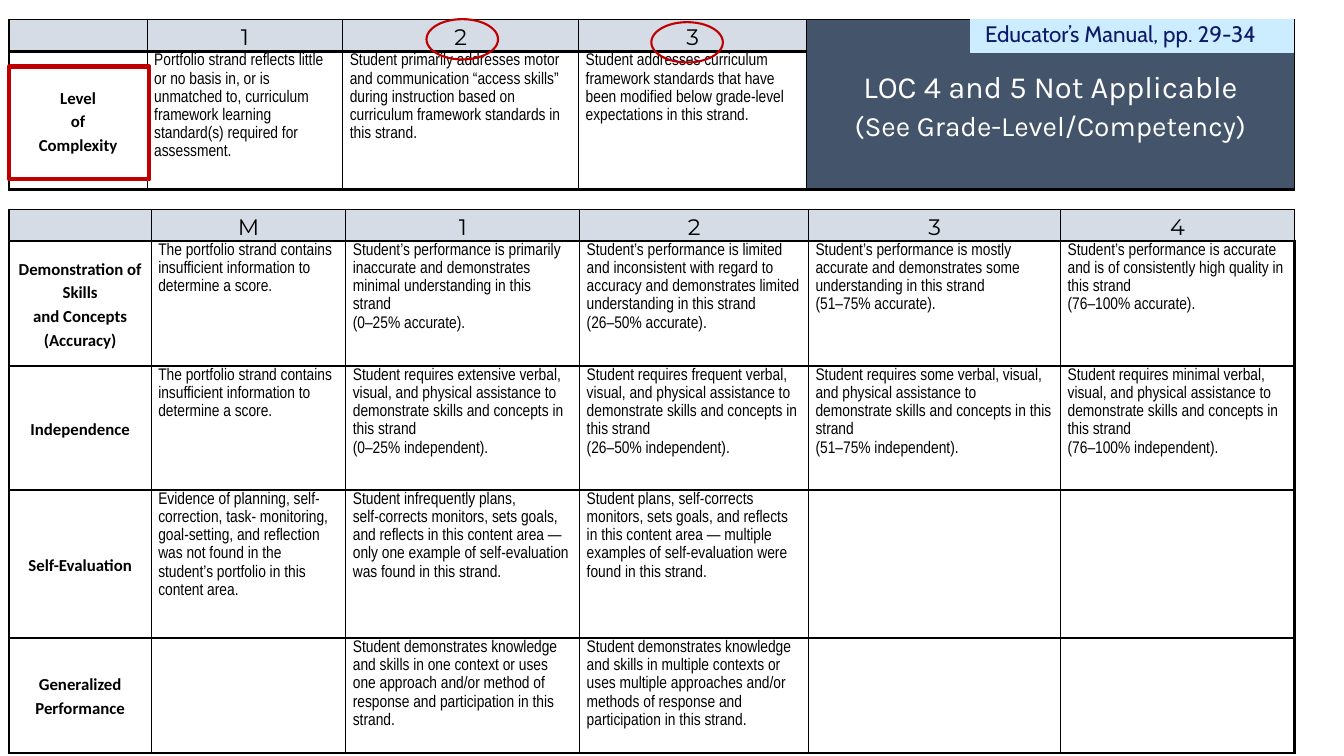
from dataclasses import dataclass

from lxml import etree
from pptx import Presentation
from pptx.dml.color import RGBColor
from pptx.enum.shapes import MSO_SHAPE
from pptx.enum.text import MSO_ANCHOR, PP_ALIGN
from pptx.oxml.ns import qn
from pptx.util import Inches, Pt

LEFT, CENTER = PP_ALIGN.LEFT, PP_ALIGN.CENTER
TOP, MIDDLE = MSO_ANCHOR.TOP, MSO_ANCHOR.MIDDLE
RECTANGLE, OVAL = MSO_SHAPE.RECTANGLE, MSO_SHAPE.OVAL


@dataclass(frozen=True)
class Theme:
    black: str = "000000"
    white: str = "FFFFFF"
    header: str = "D6DCE5"
    slate: str = "44546A"
    sky: str = "CCECFF"
    navy: str = "0D1969"
    red: str = "C00000"
    body_size: int = 12
    header_size: int = 16
    notice_sizes: tuple = (22, 20)
    thin: float = 1
    thick: float = 2.25


THEME = Theme()


@dataclass(frozen=True)
class Box:
    left: float
    top: float
    width: float
    height: float

    def inset(self, left, top, width, height):
        return Box(self.left + left, self.top + top, width, height)

    def emu(self):
        return [Inches(n) for n in (self.left, self.top, self.width, self.height)]


PAGE = Box(0, 0, 13.33, 7.5)
COMPLEXITY = PAGE.inset(0.09, 0.19, 12.74, 1.69)
COMPLEXITY_COLUMNS = [1.37, 1.94, 2.34, 2.26, 4.84]
COMPLEXITY_ROWS = [0.32, 1.37]
SCORES = PAGE.inset(0.09, 2.08, 12.75, 5.39)
SCORE_COLUMNS = [1.41, 1.93, 2.32, 2.27, 2.5, 2.32]
SCORE_ROWS = [0.31, 1.24, 1.23, 1.47, 1.14]

NOTICE = "LOC 4 and 5 Not Applicable\n(See Grade-Level/Competency)"
COMPLEXITY_TEXT = [
    ["", "1", "2", "3", ""],
    ["Level\nof\nComplexity",
     "Portfolio strand reflects little or no basis in, or is unmatched to, curriculum "
     "framework learning standard(s) required for assessment.",
     "Student primarily addresses motor and communication “access skills” during "
     "instruction based on curriculum framework standards in this strand.",
     "Student addresses curriculum framework standards that have been modified below "
     "grade-level expectations in this strand.",
     ""],
]

INSUFFICIENT = "The portfolio strand contains insufficient information to determine a score."
RANGES = ["0–25%", "26–50%", "51–75%", "76–100%"]
ACCURACY = [
    "primarily inaccurate and demonstrates minimal understanding",
    "limited and inconsistent with regard to accuracy and demonstrates limited understanding",
    "mostly accurate and demonstrates some understanding",
    "accurate and is of consistently high quality",
]
ASSISTANCE = ["extensive", "frequent", "some", "minimal"]
SCORE_TEXT = [
    ["", "M", "1", "2", "3", "4"],
    ["Demonstration of Skills\nand Concepts\n(Accuracy)", INSUFFICIENT]
    + [f"Student’s performance is {level} in this strand\n({share} accurate)."
       for level, share in zip(ACCURACY, RANGES)],
    ["Independence", INSUFFICIENT]
    + [f"Student requires {level} verbal, visual, and physical assistance to demonstrate "
       f"skills and concepts in this strand\n({share} independent)."
       for level, share in zip(ASSISTANCE, RANGES)],
    ["Self-Evaluation",
     "Evidence of planning, self-correction, task- monitoring, goal-setting, and reflection "
     "was not found in the student’s portfolio in this content area.",
     "Student infrequently plans,\nself-corrects monitors, sets goals, and reflects in this "
     "content area — only one example of self-evaluation was found in this strand.",
     "Student plans, self-corrects monitors, sets goals, and reflects in this content area — "
     "multiple examples of self-evaluation were found in this strand.",
     "", ""],
    ["Generalized Performance", "",
     "Student demonstrates knowledge and skills in one context or uses one approach and/or "
     "method of response and participation in this strand.",
     "Student demonstrates knowledge and skills in multiple contexts or uses multiple "
     "approaches and/or methods of response and participation in this strand.",
     "", ""],
]


def write(frame, text, *, font, size=THEME.body_size, color=THEME.black, bold=False,
          align=LEFT, spacing=1.15):
    """Fill a text frame, one paragraph for each line of text."""
    for number, line in enumerate(text.split("\n")):
        para = frame.add_paragraph() if number else frame.paragraphs[0]
        para.alignment, para.line_spacing = align, spacing
        span = para.add_run()
        span.text = line
        span.font.name, span.font.size, span.font.bold = font, Pt(size), bold
        span.font.color.rgb = RGBColor.from_string(color)


def set_border(cell, side, width):
    line = etree.SubElement(cell._tc.get_or_add_tcPr(), qn(f"a:ln{side}"), w=str(Pt(width)))
    fill = etree.SubElement(line, qn("a:solidFill"))
    etree.SubElement(fill, qn("a:srgbClr"), val=THEME.black)


def paint(cell, color):
    cell.fill.solid()
    cell.fill.fore_color.rgb = RGBColor.from_string(color)


def add_rubric(page, box, texts, columns, rows):
    """Table with a shaded header row, bold row names and a heavy frame round its body."""
    table = page.shapes.add_table(len(rows), len(columns), *box.emu()).table
    table.first_row = table.horz_banding = False
    for column, width in zip(table.columns, columns):
        column.width = Inches(width)
    for row, height in zip(table.rows, rows):
        row.height = Inches(height)

    last_row, last_column = len(rows) - 1, len(columns) - 1
    for r, row_texts in enumerate(texts):
        for c, text in enumerate(row_texts):
            cell = table.cell(r, c)
            cell.margin_left = cell.margin_right = Inches(0.07)
            cell.margin_top = cell.margin_bottom = 0
            heavy = {"L": r > 0 and c == 0, "R": r > 0 and c == last_column,
                     "T": r == 1, "B": r in (0, last_row)}
            for side, is_heavy in heavy.items():
                set_border(cell, side, THEME.thick if is_heavy else THEME.thin)
            paint(cell, THEME.white if r else THEME.header)
            cell.vertical_anchor = TOP if r and c else MIDDLE
            if not text:
                continue
            if r == 0:
                look = dict(font="Montserrat", size=THEME.header_size, align=CENTER)
            elif c == 0:
                look = dict(font="Calibri", bold=True, align=CENTER)
            else:
                look = dict(font="Arial Narrow")
            write(cell.text_frame, text, **look)
    return table


def add_box(page, kind, box, line, width, fill=None):
    shape = page.shapes.add_shape(kind, *box.emu())
    shape.shadow.inherit = False
    shape.line.color.rgb = RGBColor.from_string(line)
    shape.line.width = Pt(width)
    if fill:
        paint(shape, fill)
    else:
        shape.fill.background()
    return shape


def add_complexity(page, box):
    table = add_rubric(page, box, COMPLEXITY_TEXT, COMPLEXITY_COLUMNS, COMPLEXITY_ROWS)
    notice = table.cell(0, 4)
    notice.merge(table.cell(1, 4))
    paint(notice, THEME.slate)
    write(notice.text_frame, NOTICE, font="Karla", color=THEME.white, align=CENTER)
    for para, size in zip(notice.text_frame.paragraphs, THEME.notice_sizes):
        para.runs[0].font.size = Pt(size)

    manual = add_box(page, RECTANGLE, box.inset(box.width - 3.2, 0, 3.2, 0.33),
                     THEME.sky, 0.75, fill=THEME.sky)
    frame = manual.text_frame
    frame.word_wrap, frame.vertical_anchor = True, MIDDLE
    frame.margin_left = Inches(0.14)
    write(frame, "Educator’s Manual, pp. 29-34", font="Cabin", size=THEME.header_size,
          color=THEME.navy, spacing=0.85)

    add_box(page, RECTANGLE, box.inset(0, 0.47, 1.39, 1.12), THEME.red, 3)
    for left, top in [(4.14, 0), (6.37, 0.03)]:
        add_box(page, OVAL, box.inset(left, top, 0.71, 0.4), THEME.red, 1.5)


def main():
    deck = Presentation()
    deck.slide_width, deck.slide_height = Inches(PAGE.width), Inches(PAGE.height)
    page = deck.slides.add_slide(deck.slide_layouts.get_by_name("Blank"))
    add_rubric(page, SCORES, SCORE_TEXT, SCORE_COLUMNS, SCORE_ROWS)
    add_complexity(page, COMPLEXITY)
    deck.save("out.pptx")


if __name__ == "__main__":
    main()
